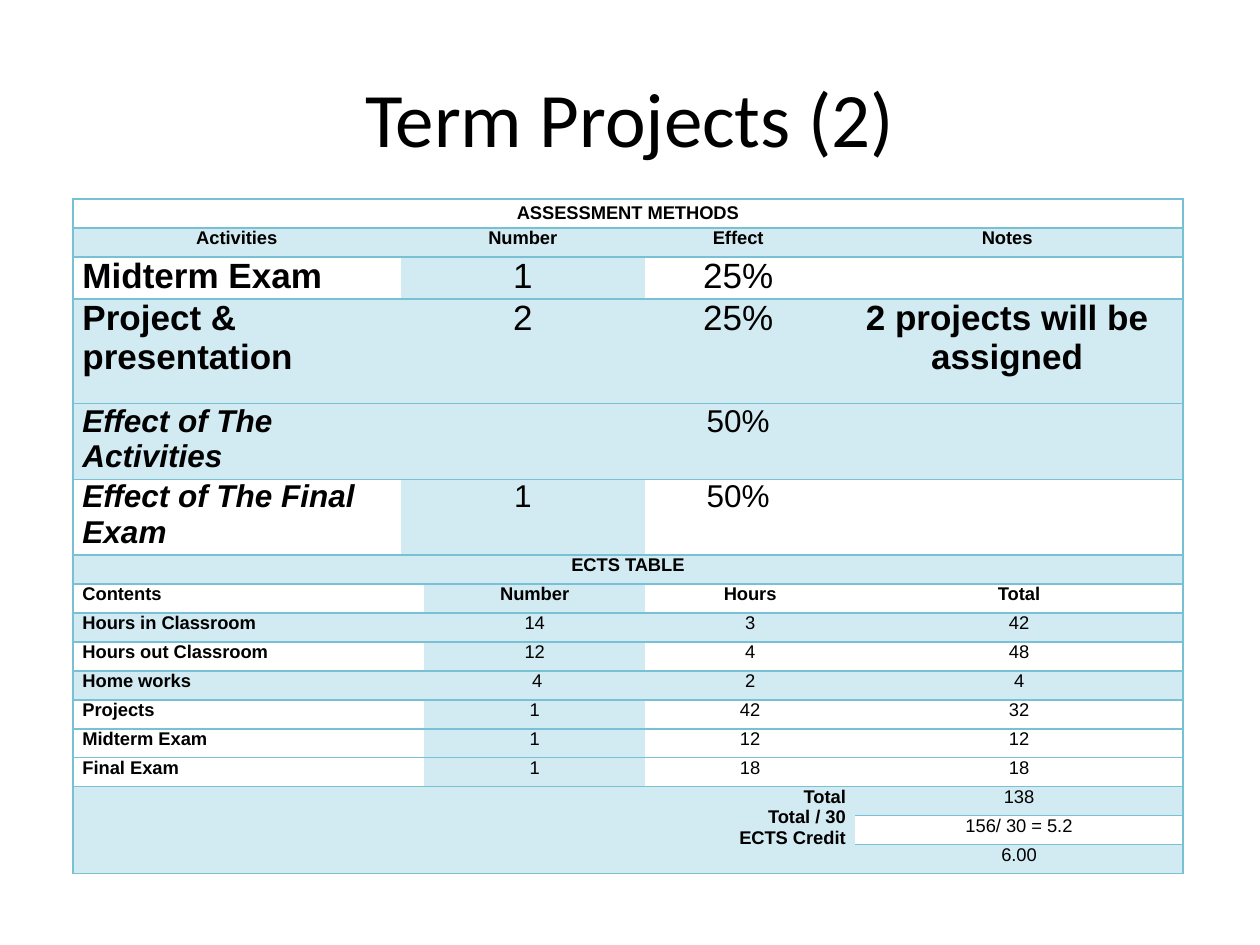
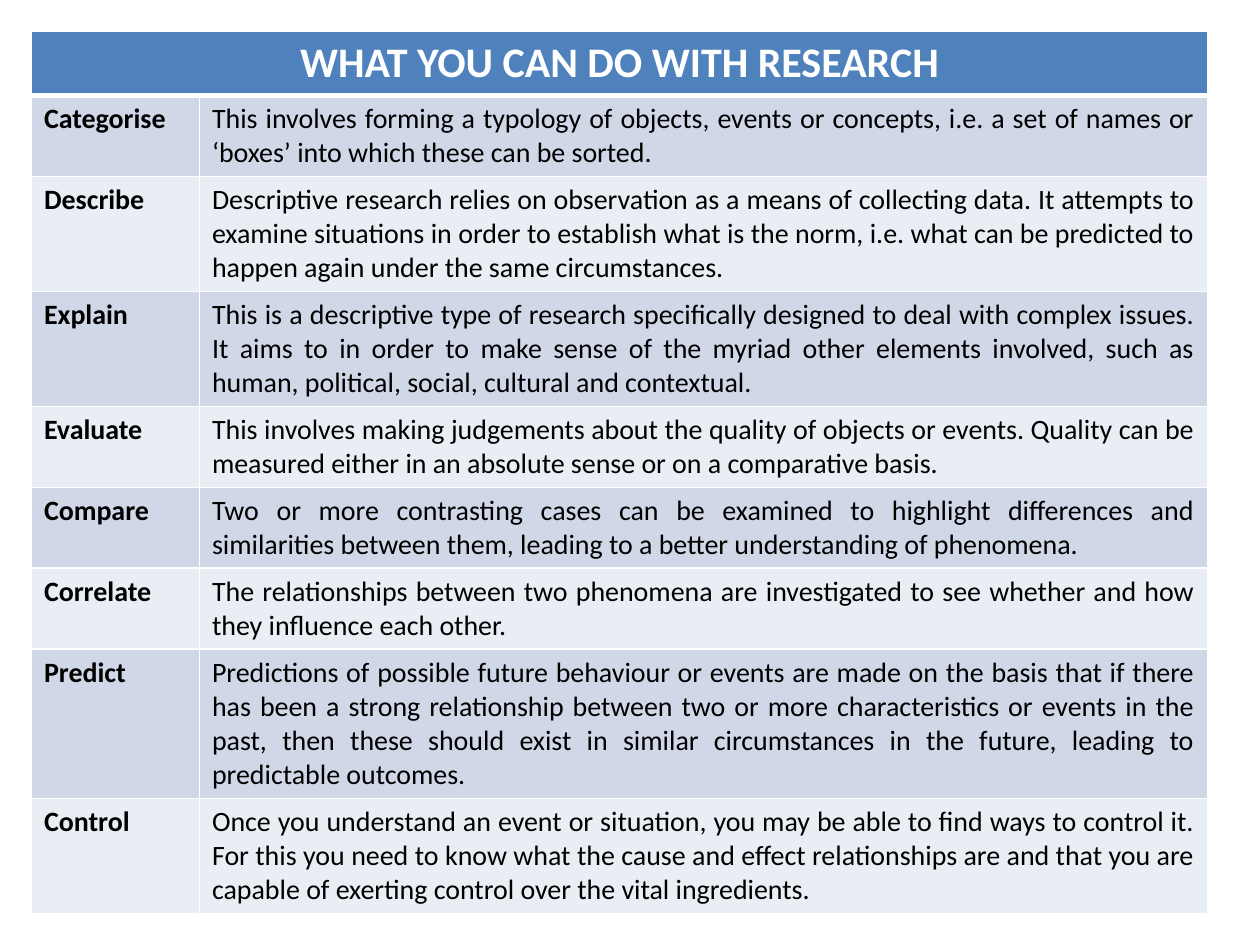
"""Build two slides: a course assessment table and a summary of research purposes."""
from lxml.etree import SubElement
from pptx import Presentation
from pptx.dml.color import RGBColor
from pptx.enum.text import MSO_ANCHOR as Anchor, PP_ALIGN as Align
from pptx.oxml.ns import qn
from pptx.util import Pt

BLACK = RGBColor(0x00, 0x00, 0x00)
WHITE = RGBColor(0xFF, 0xFF, 0xFF)
AQUA_LINE = RGBColor(0x78, 0xC0, 0xD4)
AQUA_FILL = RGBColor(0xD2, 0xEA, 0xF1)
BLUE_HEAD = RGBColor(0x4F, 0x81, 0xBD)
BLUE_ODD = RGBColor(0xD0, 0xD8, 0xE8)
BLUE_EVEN = RGBColor(0xE9, 0xED, 0xF4)
PLAIN_STYLE = "{2D5ABB26-0587-4C30-8999-92F81FD0307C}"


def add_plain_table(slide, left, top, widths, heights):
    """Add an unstyled table with the given column widths and row heights."""
    frame = slide.shapes.add_table(len(heights), len(widths), Pt(left), Pt(top),
                                   Pt(sum(widths)), Pt(sum(heights)))
    table = frame.table
    table.first_row = table.horz_banding = False
    table._tbl.tblPr.find(qn("a:tableStyleId")).text = PLAIN_STYLE
    for column, width in zip(table.columns, widths):
        column.width = Pt(width)
    for row, height in zip(table.rows, heights):
        row.height = Pt(height)
    return table


def write_cell(cell, text, font_name, size, color, bold, align, fill, line, borders):
    """Set a cell's borders (side to width), fill and text."""
    properties = cell._tc.get_or_add_tcPr()
    for side in "LRTB":
        if side in borders:
            edge = SubElement(properties, qn(f"a:ln{side}"), w=str(Pt(borders[side])))
            SubElement(SubElement(edge, qn("a:solidFill")), qn("a:srgbClr"), val=str(line))
    if fill is None:
        cell.fill.background()
    else:
        cell.fill.solid()
        cell.fill.fore_color.rgb = fill
    cell.text = text
    for paragraph in cell.text_frame.paragraphs:
        paragraph.alignment = align
        paragraph.font.name = font_name
        paragraph.font.size = Pt(size)
        paragraph.font.bold = bold
        paragraph.font.color.rgb = color


presentation = Presentation()
presentation.slide_width, presentation.slide_height = Pt(720), Pt(540)
blank = presentation.slide_layouts[6]

projects_slide = presentation.slides.add_slide(blank)
heading = projects_slide.shapes.add_textbox(Pt(36), Pt(21.6), Pt(648), Pt(90)).text_frame
heading.word_wrap = True
heading.vertical_anchor = Anchor.MIDDLE
title = heading.paragraphs[0]
title.text = "Term Projects (2)"
title.alignment = Align.CENTER
title.font.name = "Calibri"
title.font.size = Pt(44)
title.font.color.rgb = BLACK

ASSESSMENT = [
    ("ASSESSMENT METHODS",),
    ("Activities", "Number", "Effect", "Notes"),
    ("Midterm Exam", "1", "25%", ""),
    ("Project & presentation", "2", "25%", "2 projects will be assigned"),
    ("Effect of The Activities", "", "50%", ""),
    ("Effect of The Final Exam", "1", "50%", ""),
    ("ECTS TABLE",),
    ("Contents", "Number", "Hours", "Total"),
    ("Hours in Classroom", "14", "3", "42"),
    ("Hours out Classroom", "12", "4", "48"),
    ("Home works", " 4", "2", "4"),
    ("Projects", "1", "42", "32"),
    ("Midterm Exam", "1", "12", "12"),
    ("Final Exam", "1", "18", "18"),
    ("Total\nTotal / 30\nECTS Credit", "138"),
    (None, "156/ 30 = 5.2"),
    (None, "6.00"),
]
ECTS_ROW, TOTALS_ROW = 6, 14
HEADER_ROWS = (0, 1, 6, 7)
SHADED_ROWS = (1, 3, 4, 6, 8, 10, 14, 16)
LARGE_SIZES = {2: 20, 3: 20, 4: 18, 5: 18}
ROW_HEIGHTS = {2: 22.3, 3: 59.76, 4: 40.3, 5: 40.3}
heights = [ROW_HEIGHTS.get(row, 16.56) for row in range(len(ASSESSMENT))]
assessment = add_plain_table(projects_slide, 41.76, 113.76,
                             [187.2, 8.64, 126, 106.56, 8.64, 187.2], heights)
assessment.cell(TOTALS_ROW, 0).merge(assessment.cell(len(ASSESSMENT) - 1, 4))

for row, entries in enumerate(ASSESSMENT):
    if len(entries) == 1:
        starts = (0, 6)
    elif len(entries) == 2:
        starts = (0, 5, 6)
    else:
        starts = (0, 1, 3, 4, 6) if row < ECTS_ROW else (0, 2, 3, 5, 6)
    for position, text in enumerate(entries):
        if text is None:
            continue
        start, end = starts[position], starts[position + 1]
        cell = assessment.cell(row, start)
        if end - start > 1 and not cell.is_merge_origin:
            cell.merge(assessment.cell(row, end - 1))
        cell.margin_left = cell.margin_right = Pt(5.4)
        cell.margin_top = cell.margin_bottom = 0
        cell.vertical_anchor = Anchor.MIDDLE if row == 0 else Anchor.TOP
        borders = {"T": 1, "B": 1}
        if start == 0:
            borders["L"] = 1
        if end == 6:
            borders["R"] = 1
        is_label = position == 0
        is_number = position == 1 and len(entries) == 4
        is_note = position == 3 and row < ECTS_ROW
        if row == TOTALS_ROW and is_label:
            align = Align.RIGHT
        elif is_label and len(entries) == 4 and row != 1:
            align = Align.LEFT
        else:
            align = Align.CENTER
        write_cell(cell, text, "Arial", LARGE_SIZES.get(row, 10.5), BLACK,
                   row in HEADER_ROWS or is_label or is_note, align,
                   AQUA_FILL if row in SHADED_ROWS or is_number else None,
                   AQUA_LINE, borders)
        if is_label and row in (4, 5):
            cell.text_frame.paragraphs[0].font.italic = True

PURPOSES = [
    ("Categorise", 2, "This involves forming a typology of objects, events or concepts, i.e. "
     "a set of names or ‘boxes’ into which these can be sorted."),
    ("Describe", 3, "Descriptive research relies on observation as a means of collecting data. "
     "It attempts to examine situations in order to establish what is the norm, i.e. what can "
     "be predicted to happen again under the same circumstances."),
    ("Explain", 3, "This is a descriptive type of research specifically designed to deal with "
     "complex issues. It aims to in order to make sense of the myriad other elements involved, "
     "such as human, political, social, cultural and contextual."),
    ("Evaluate", 2, "This involves making judgements about the quality of objects or events. "
     "Quality can be measured either in an absolute sense or on a comparative basis."),
    ("Compare", 2, "Two or more contrasting cases can be examined to highlight differences and "
     "similarities between them, leading to a better understanding of phenomena."),
    ("Correlate", 2, "The relationships between two phenomena are investigated to see whether "
     "and how they influence each other."),
    ("Predict", 4, "Predictions of possible future behaviour or events are made on the basis "
     "that if there has been a strong relationship between two or more characteristics or "
     "events in the past, then these should exist in similar circumstances in the future, "
     "leading to predictable outcomes."),
    ("Control", 3, "Once you understand an event or situation, you may be able to find ways to "
     "control it. For this you need to know what the cause and effect relationships are and "
     "that you are capable of exerting control over the vital ingredients."),
]
LINE_HEIGHT, CELL_PADDING = 19.53, 7.2
research_slide = presentation.slides.add_slide(blank)
heights = [36.5] + [lines * LINE_HEIGHT + CELL_PADDING for _, lines, _ in PURPOSES]
research = add_plain_table(research_slide, 18, 18, [96, 576], heights)
research.cell(0, 0).merge(research.cell(0, 1))
write_cell(research.cell(0, 0), "WHAT YOU CAN DO WITH RESEARCH", "Calibri", 24, WHITE, True,
           Align.CENTER, BLUE_HEAD, WHITE, {"L": 1, "R": 1, "T": 1, "B": 3})
for row, (purpose, _, description) in enumerate(PURPOSES, start=1):
    band = BLUE_ODD if row % 2 else BLUE_EVEN
    borders = {"L": 1, "R": 1, "T": 3 if row == 1 else 1, "B": 1}
    for column, text in enumerate((purpose, description)):
        write_cell(research.cell(row, column), text, "Calibri", 16, BLACK, column == 0,
                   Align.JUSTIFY, band, WHITE, borders)

presentation.save("out.pptx")
